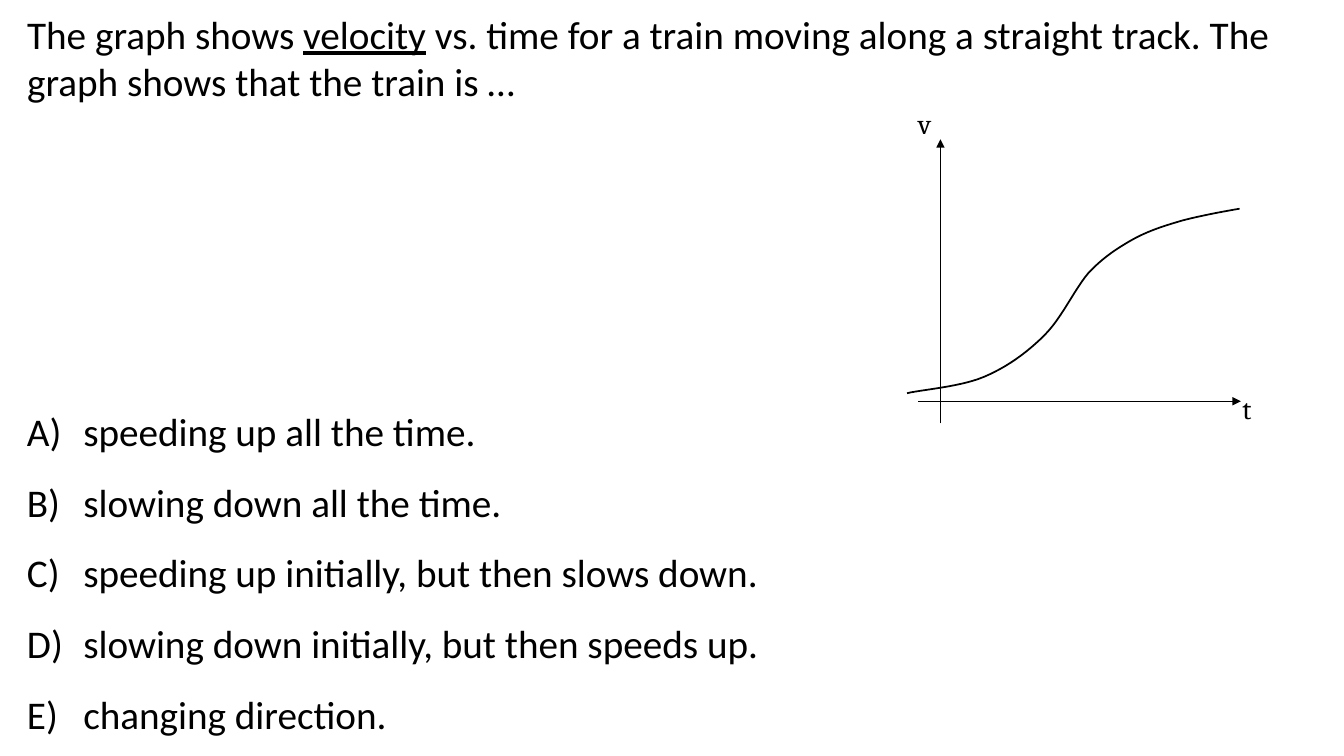
import pptx
import pptx.util
import pptx.dml.color
import pptx.enum.text
import pptx.enum.shapes
import pptx.oxml.ns
import lxml.etree
from dataclasses import dataclass

Cm = pptx.util.Cm
Pt = pptx.util.Pt

STEM = [
    ("The graph shows ", False),
    ("velocity", True),
    (" vs. time for a train moving along a straight track. The graph shows that the train is …", False),
]
ANSWERS = [
    "speeding up all the time.",
    "slowing down all the time.",
    "speeding up initially, but then slows down.",
    "slowing down initially, but then speeds up.",
    "changing direction.",
]
AXES = [
    ((23.7, 10.67), (23.7, 3.51)),
    ((23.14, 10.11), (31.27, 10.11)),
]
LABELS = [
    ("t", (31.06, 9.73, 1.32, 1.32)),
    ("v", (22.89, 2.57, 1.35, 1.32)),
]
START = (22.86, 9.91)
BENDS = [
    ((23.16, 9.83), (24.21, 9.75), (24.79, 9.5)),
    ((25.35, 9.27), (25.88, 8.89), (26.31, 8.46)),
    ((26.75, 8.03), (27.08, 7.29), (27.43, 6.88)),
    ((27.81, 6.48), (28.14, 6.27), (28.52, 6.05)),
    ((28.93, 5.82), (29.34, 5.69), (29.79, 5.56)),
    ((30.23, 5.44), (30.94, 5.31), (31.24, 5.26)),
]
STEM_BOX = (0.43, 0.13, 33.05, 2.64)
LIST_BOX = (0.43, 9.55, 23.29, 9.5)
INDENT = 1.42
STEPS = 12


@dataclass(frozen=True)
class Theme:
    ink: str = "000000"
    body: str = "Calibri"
    math: str = "Cambria"
    large: float = 28
    small: float = 20
    axis: float = 0.75
    curve: float = 1.25


THEME = Theme()
INK = pptx.dml.color.RGBColor.from_string(THEME.ink)


def add_run(para, text, face, size, under=False):
    run = para.add_run()
    run.text = text
    run.font.name = face
    run.font.size = Pt(size)
    run.font.color.rgb = INK
    if under:
        run.font.underline = True


def add_tag(node, name, **attrs):
    return lxml.etree.SubElement(node, pptx.oxml.ns.qn(name), attrs)


def add_box(shapes, box):
    return shapes.add_textbox(*map(Cm, box)).text_frame


def set_line(shape, width):
    shape.line.color.rgb = INK
    shape.line.width = Pt(width)


def add_stem(slide):
    title = slide.shapes.title
    title.left, title.top, title.width, title.height = map(Cm, STEM_BOX)
    frame = title.text_frame
    frame.word_wrap = True
    frame.auto_size = pptx.enum.text.MSO_AUTO_SIZE.SHAPE_TO_FIT_TEXT
    frame.vertical_anchor = pptx.enum.text.MSO_ANCHOR.TOP
    para = frame.paragraphs[0]
    para.alignment = pptx.enum.text.PP_ALIGN.LEFT
    for text, under in STEM:
        add_run(para, text, THEME.body, THEME.large, under)


def add_axis(shapes, start, end):
    kind = pptx.enum.shapes.MSO_CONNECTOR.STRAIGHT
    axis = shapes.add_connector(kind, *map(Cm, start + end))
    set_line(axis, THEME.axis)
    add_tag(axis.line._get_or_add_ln(), "a:tailEnd", type="triangle")
    add_tag(axis._element.spPr, "a:effectLst")


def trace():
    first = START
    for bend in BENDS:
        knots = (first,) + bend
        for step in range(1, STEPS + 1):
            t = step / STEPS
            u = 1 - t
            parts = (u ** 3, 3 * u * u * t, 3 * u * t * t, t ** 3)
            yield tuple(
                Cm(sum(part * knot[dim] for part, knot in zip(parts, knots)))
                for dim in (0, 1)
            )
        first = bend[-1]


def add_curve(shapes):
    pen = shapes.build_freeform(*map(Cm, START))
    pen.add_line_segments(list(trace()), close=False)
    curve = pen.convert_to_shape()
    curve.fill.background()
    curve.shadow.inherit = False
    set_line(curve, THEME.curve)


def add_graph(slide):
    shapes = slide.shapes.add_group_shape().shapes
    for start, end in AXES:
        add_axis(shapes, start, end)
    for text, box in LABELS:
        frame = add_box(shapes, box)
        frame.word_wrap = True
        add_run(frame.paragraphs[0], text, THEME.math, THEME.small)
    add_curve(shapes)


def add_list(slide):
    frame = add_box(slide.shapes, LIST_BOX)
    frame.word_wrap = True
    frame.auto_size = pptx.enum.text.MSO_AUTO_SIZE.SHAPE_TO_FIT_TEXT
    for index, text in enumerate(ANSWERS):
        para = frame.add_paragraph() if index else frame.paragraphs[0]
        para.line_spacing = 1.5
        props = para._p.get_or_add_pPr()
        props.set("marL", str(Cm(INDENT)))
        props.set("indent", str(-Cm(INDENT)))
        add_tag(props, "a:buFont", typeface="+mj-lt")
        add_tag(props, "a:buAutoNum", type="alphaUcParenR")
        add_run(para, text, THEME.body, THEME.large)


def main():
    deck = pptx.Presentation()
    deck.slide_width = Cm(33.87)
    deck.slide_height = Cm(19.05)
    slide = deck.slides.add_slide(deck.slide_layouts[5])
    add_stem(slide)
    add_graph(slide)
    add_list(slide)
    deck.save("out.pptx")


if __name__ == "__main__":
    main()
